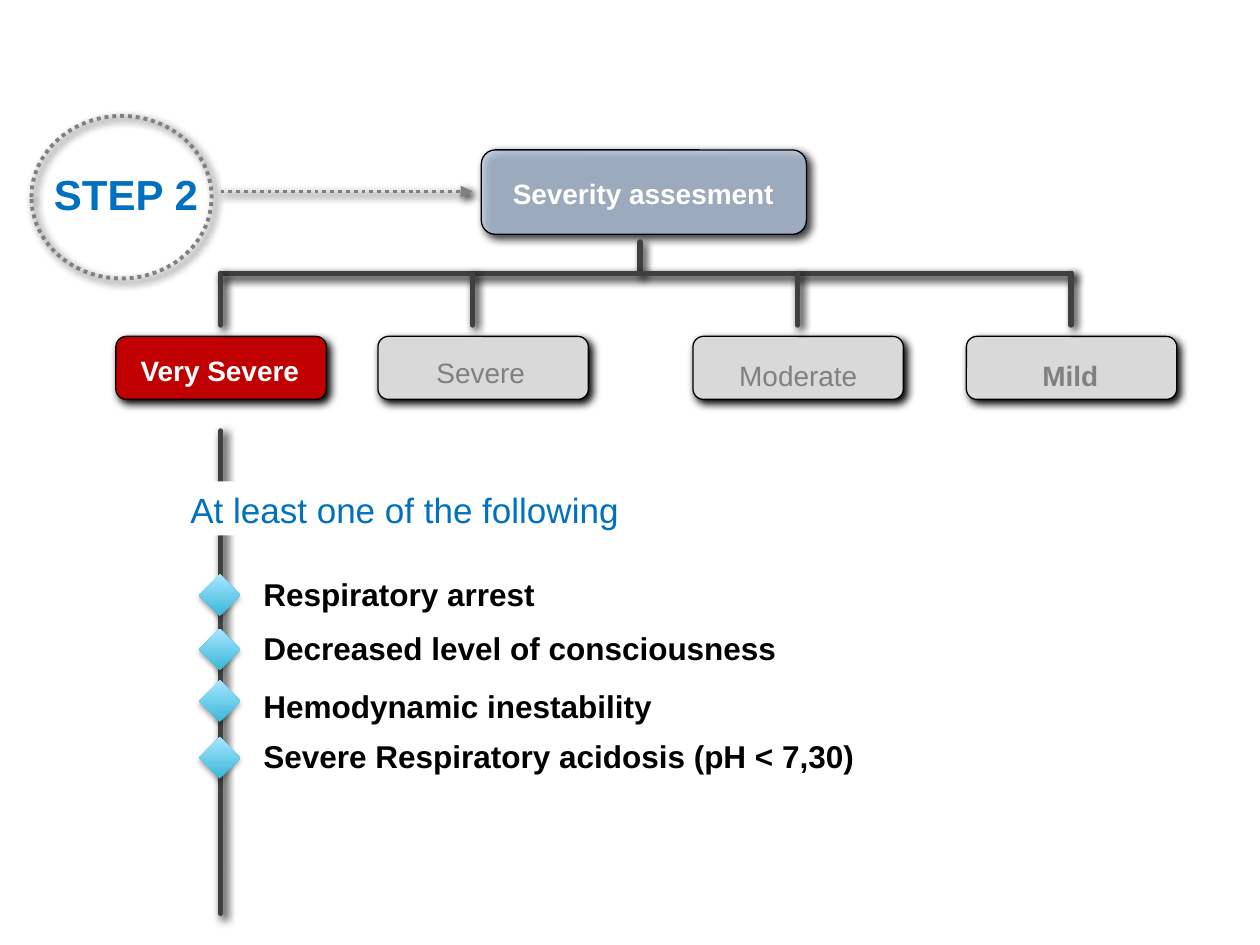
from pptx import Presentation
from pptx.dml.color import RGBColor
from pptx.enum import dml, shapes, text
from pptx.oxml import parse_xml
from pptx.oxml.ns import nsdecls, qn
from pptx.util import Inches, Pt

WHITE = RGBColor(0xFF, 0xFF, 0xFF)
BLACK = RGBColor(0x00, 0x00, 0x00)
BLUE = RGBColor(0x00, 0x70, 0xC0)
PALE_BLUE = RGBColor(0xB9, 0xCD, 0xE5)
RED = RGBColor(0xC0, 0x00, 0x00)
LIGHT_GRAY = RGBColor(0xD9, 0xD9, 0xD9)
GRAY = RGBColor(0x80, 0x80, 0x80)
DARK_GRAY = RGBColor(0x40, 0x40, 0x40)
DIAMOND_BOTTOM = RGBColor(0x39, 0xB7, 0xD8)
DIAMOND_TOP = RGBColor(0xA7, 0xE6, 0xFF)

TRUNK_X = 1.75
BRANCH_Y = 2.17
# label, box left, branch x, label left, label top, fill, font colour, bold
LEVELS = [
    ("Very Severe", 0.92, 1.75, 0.95, 2.75, RED, WHITE, True),
    ("Severe", 3, 3.75, 3.02, 2.77, LIGHT_GRAY, GRAY, False),
    ("Moderate", 5.5, 6.33, 5.54, 2.79, LIGHT_GRAY, GRAY, False),
    ("Mild", 7.67, 8.5, 7.7, 2.79, LIGHT_GRAY, GRAY, True),
]
# criterion, text top, diamond top
CRITERIA = [
    ("Respiratory arrest", 4.51, 4.56),
    ("Decreased level of consciousness", 4.94, 4.99),
    ("Hemodynamic inestability", 5.4, 5.4),
    ("Severe Respiratory acidosis (pH < 7,30)", 5.8, 5.85),
]


def add_shadow(shape, alpha=100, blur=5, distance=2.8, angle=45):
    """Give a finished shape or line an outer black shadow (points, degrees)."""
    properties = shape._element.spPr
    for effects in properties.findall(qn("a:effectLst")):
        properties.remove(effects)
    properties.append(parse_xml(
        f'<a:effectLst {nsdecls("a")}><a:outerShdw blurRad="{Pt(blur)}" '
        f'dist="{Pt(distance)}" dir="{angle * 60000}" algn="tl" rotWithShape="0">'
        f'<a:srgbClr val="000000"><a:alpha val="{alpha * 1000}"/></a:srgbClr>'
        '</a:outerShdw></a:effectLst>'))


def style_line(line, color, width, dotted=False):
    line.color.rgb = color
    line.width = Pt(width)
    if dotted:
        line.dash_style = dml.MSO_LINE.ROUND_DOT


def add_shape(slide, kind, left, top, width, height, fill=None):
    shape = slide.shapes.add_shape(
        kind, Inches(left), Inches(top), Inches(width), Inches(height))
    shape.shadow.inherit = False
    if fill is None:
        shape.fill.background()
    else:
        shape.fill.solid()
        shape.fill.fore_color.rgb = fill
    shape.line.fill.background()
    return shape


def add_box(slide, left, top, width, height, fill):
    box = add_shape(slide, shapes.MSO_SHAPE.ROUNDED_RECTANGLE,
                    left, top, width, height, fill)
    style_line(box.line, BLACK, 0.75)
    add_shadow(box)
    return box


def add_line(slide, start, end, color=DARK_GRAY, width=3, dotted_arrow=False):
    line = slide.shapes.add_connector(
        shapes.MSO_CONNECTOR.STRAIGHT, *map(Inches, start + end))
    style_line(line.line, color, width, dotted_arrow)
    outline = line._element.spPr.find(qn("a:ln"))
    if dotted_arrow:
        outline.append(parse_xml(f'<a:tailEnd {nsdecls("a")} type="triangle"/>'))
    else:
        outline.set("cap", "rnd")
    add_shadow(line)


def write(shape, wording, size, color, bold=False,
          align=text.PP_ALIGN.LEFT, anchor=text.MSO_ANCHOR.BOTTOM):
    frame = shape.text_frame
    frame.text = wording
    frame.word_wrap = True
    frame.auto_size = text.MSO_AUTO_SIZE.SHAPE_TO_FIT_TEXT
    frame.vertical_anchor = anchor
    frame.margin_left = frame.margin_right = Inches(0.09)
    frame.margin_top = frame.margin_bottom = Inches(0.04)
    paragraph = frame.paragraphs[0]
    paragraph.alignment = align
    font = paragraph.runs[0].font
    font.name, font.size, font.bold = "Arial", Pt(size), bold
    font.color.rgb = color


def add_text(slide, wording, left, top, width, height, *style, **options):
    box = slide.shapes.add_textbox(
        Inches(left), Inches(top), Inches(width), Inches(height))
    write(box, wording, *style, **options)


def add_step(slide):
    """Draw the dotted step circle, its arrow and the heading box."""
    heading = add_box(slide, 3.82, 1.19, 2.58, 0.67, PALE_BLUE)
    color = heading._element.spPr.find(qn("a:solidFill"))[0]
    color.append(parse_xml(f'<a:alpha {nsdecls("a")} val="77000"/>'))
    add_text(slide, "Severity assesment", 3.98, 1.35, 2.35, 0.36, 16, WHITE, True)
    add_line(slide, (1.75, 1.52), (3.75, 1.52), GRAY, 2.25, dotted_arrow=True)
    circle = add_shape(slide, shapes.MSO_SHAPE.OVAL, 0.25, 0.92, 1.43, 1.29)
    style_line(circle.line, GRAY, 2.25, dotted=True)
    add_shadow(circle)
    add_text(slide, "STEP 2", 0.05, 1.3, 1.9, 0.5, 24, BLUE, True,
             align=text.PP_ALIGN.CENTER, anchor=text.MSO_ANCHOR.TOP)


def add_criterion(slide, wording, text_top, diamond_top):
    diamond = add_shape(slide, shapes.MSO_SHAPE.DIAMOND,
                        1.58, diamond_top, 0.33, 0.33)
    diamond.fill.gradient()
    diamond.fill.gradient_angle = 90
    for stop, color in zip(diamond.fill.gradient_stops,
                           (DIAMOND_BOTTOM, DIAMOND_TOP)):
        stop.color.rgb = color
    add_shadow(diamond, alpha=35, blur=3.1, distance=1.8, angle=90)
    add_text(slide, wording, 2, text_top, 5.09, 0.39, 18, BLACK, True)


def add_level(slide, label, left, branch_x, label_left, label_top,
              fill, color, bold):
    add_box(slide, left, 2.67, 1.67, 0.5, fill)
    add_text(slide, label, label_left, label_top, 1.59, 0.36, 16, color, bold,
             align=text.PP_ALIGN.CENTER)
    add_line(slide, (branch_x, BRANCH_Y), (branch_x, 2.58))


def main():
    presentation = Presentation()
    presentation.slide_width = Inches(10)
    presentation.slide_height = Inches(7.5)
    slide = presentation.slides.add_slide(presentation.slide_layouts[6])

    add_step(slide)
    add_line(slide, (TRUNK_X, 3.42), (TRUNK_X, 7.25))
    for criterion in CRITERIA:
        add_criterion(slide, *criterion)
    caption = add_shape(slide, shapes.MSO_SHAPE.RECTANGLE,
                        1.42, 3.82, 7.58, 0.43, WHITE)
    write(caption, "At least one of the following", 20, BLUE)

    add_line(slide, (5.08, 1.92), (5.08, BRANCH_Y))
    add_line(slide, (TRUNK_X, BRANCH_Y), (8.5, BRANCH_Y))
    for level in LEVELS:
        add_level(slide, *level)

    presentation.save("out.pptx")


if __name__ == "__main__":
    main()
